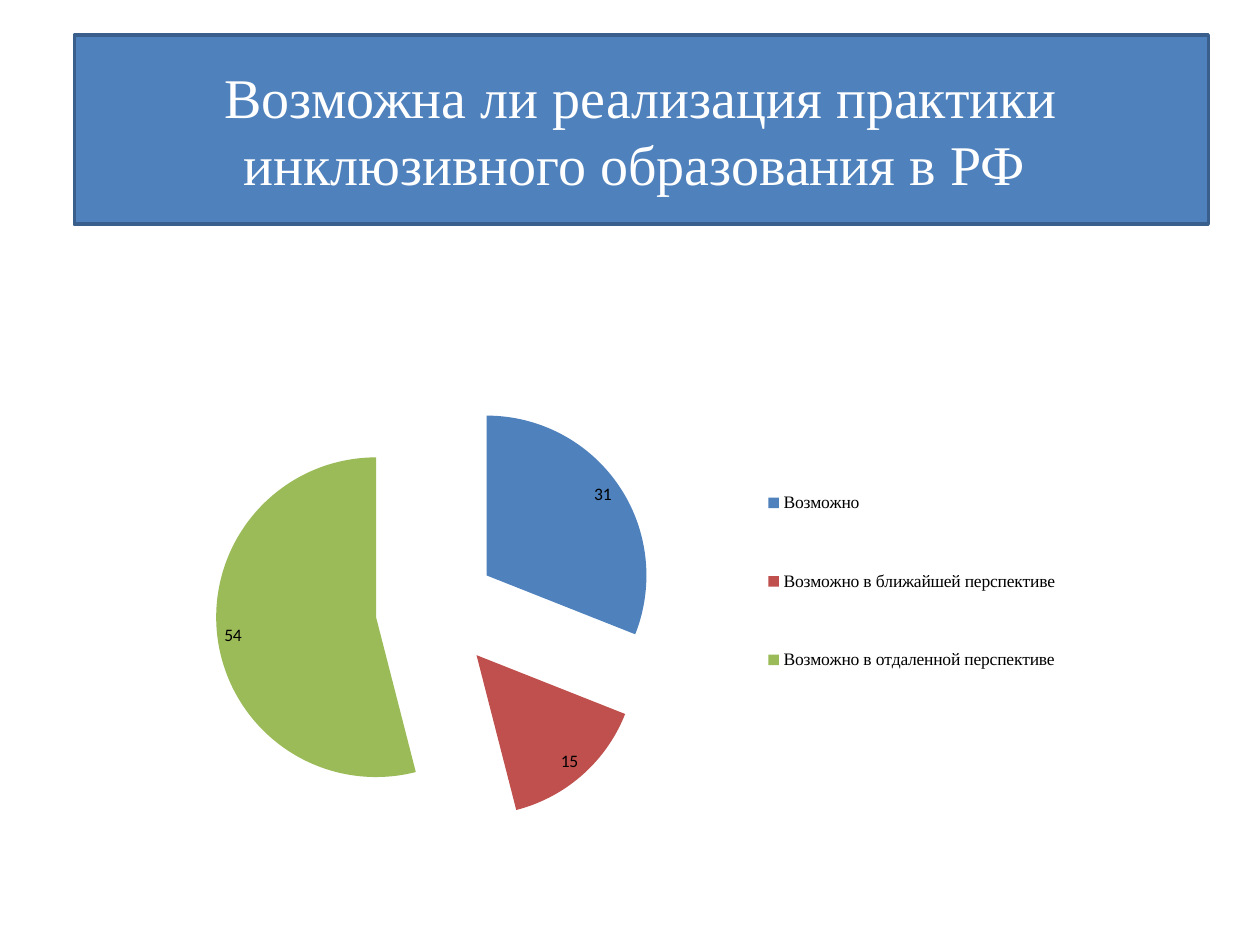
from lxml.etree import SubElement
from pptx import Presentation
from pptx.chart.data import CategoryChartData
from pptx.dml.color import RGBColor
from pptx.enum.chart import XL_CHART_TYPE, XL_LABEL_POSITION, XL_LEGEND_POSITION
from pptx.enum.shapes import MSO_SHAPE
from pptx.enum.text import MSO_ANCHOR, PP_ALIGN
from pptx.oxml import parse_xml
from pptx.oxml.ns import nsdecls, qn
from pptx.util import Inches, Pt


def color(hex_value):
    return RGBColor.from_string(hex_value)


def manual_layout(x, y, width, height, inner=False):
    layout = parse_xml(f"<c:layout {nsdecls('c')}><c:manualLayout/></c:layout>")
    settings = [("layoutTarget", "inner")] if inner else []
    settings += [("xMode", "edge"), ("yMode", "edge")]
    settings += [("x", x), ("y", y), ("w", width), ("h", height)]
    for tag, value in settings:
        SubElement(layout[0], qn(f"c:{tag}")).set("val", str(value))
    return layout


presentation = Presentation()
presentation.slide_width = Inches(10)
presentation.slide_height = Inches(7.5)
slide = presentation.slides.add_slide(presentation.slide_layouts[6])

heading = slide.shapes.add_shape(
    MSO_SHAPE.RECTANGLE, Inches(0.59), Inches(0.28), Inches(9), Inches(1.5)
)
heading.shadow.inherit = False
heading.fill.solid()
heading.fill.fore_color.rgb = color("4F81BD")
heading.line.color.rgb = color("3A5F8C")
heading.line.width = Pt(2)
heading.text_frame.word_wrap = True
heading.text_frame.vertical_anchor = MSO_ANCHOR.MIDDLE
question = heading.text_frame.paragraphs[0]
question.text = "Возможна ли реализация практики инклюзивного образования в РФ "
question.alignment = PP_ALIGN.CENTER
question.font.name = "Times New Roman"
question.font.size = Pt(32)
question.font.color.rgb = color("FFFFFF")

answers = [
    ("Возможно", 31, "4F81BD"),
    ("Возможно в ближайшей перспективе", 15, "C0504D"),
    ("Возможно в отдаленной перспективе", 54, "9BBB59"),
]
answer_data = CategoryChartData()
answer_data.categories = [answer for answer, share, fill in answers]
answer_data.add_series("Series 1", [share for answer, share, fill in answers])
pie = slide.shapes.add_chart(
    XL_CHART_TYPE.PIE, Inches(0.59), Inches(2.1), Inches(8.98), Inches(4.49), answer_data
).chart
pie.has_title = False
pie.font.name = "Calibri"
pie.font.size = Pt(10)
pie.font.color.rgb = color("000000")

plot = pie.plots[0]
plot.vary_by_categories = True
shares = plot.series[0]
for index, (answer, share, fill) in enumerate(answers):
    sector = shares.points[index].format.fill
    sector.solid()
    sector.fore_color.rgb = color(fill)
explosion = parse_xml(f'<c:explosion {nsdecls("c")} val="38"/>')
shares._element.find(qn("c:dPt")).addprevious(explosion)

plot.has_data_labels = True
plot.data_labels.show_value = True
plot.data_labels.show_percentage = False
plot.data_labels.position = XL_LABEL_POSITION.BEST_FIT

pie.has_legend = True
legend = pie.legend
legend.position = XL_LEGEND_POSITION.RIGHT
legend.include_in_layout = False
legend.font.name = "Times New Roman"
legend.font.size = Pt(10)

plot_area = pie._chartSpace.chart.plotArea
for element, layout in (
    (plot_area, manual_layout(0.03, 0.22, 0.58, 0.78, inner=True)),
    (legend._element, manual_layout(0.55, 0.3, 0.38, 0.52)),
):
    for automatic_layout in element.findall(qn("c:layout")):
        element.remove(automatic_layout)
    if element is plot_area:
        element.insert(0, layout)
    else:
        element.find(qn("c:legendPos")).addnext(layout)

presentation.save("out.pptx")
